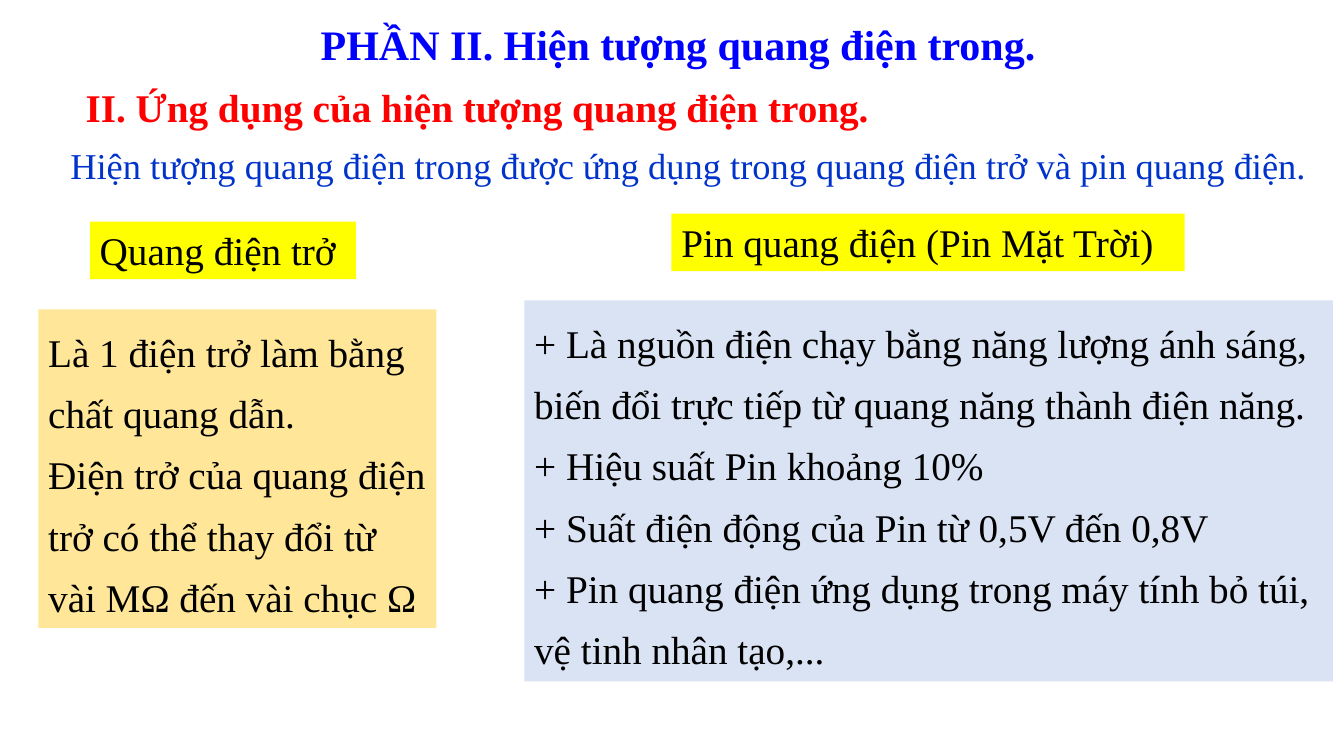
from pptx import Presentation
from pptx.dml.color import RGBColor
from pptx.enum.shapes import MSO_SHAPE as Preset
from pptx.enum.text import MSO_ANCHOR as Anchor, MSO_AUTO_SIZE as AutoSize, PP_ALIGN as Align
from pptx.util import Inches, Pt

WIDTH, HEIGHT = Inches(13.33), Inches(7.5)
FONT = "Times New Roman"
BLUE = RGBColor(0x00, 0x00, 0xFF)
RED = RGBColor(0xFF, 0x00, 0x00)
ROYAL = RGBColor(0x00, 0x33, 0xCC)
BLACK = RGBColor(0x00, 0x00, 0x00)
YELLOW = RGBColor(0xFF, 0xFF, 0x00)
SAND = RGBColor(0xFF, 0xE6, 0x99)
PALE_BLUE = RGBColor(0xDA, 0xE3, 0xF3)

RESISTOR_FACTS = [
    "Là 1 điện trở làm bằng chất quang dẫn.",
    "Điện trở của quang điện trở có thể thay đổi từ vài MΩ đến vài chục Ω",
]
CELL_FACTS = [
    "+ Là nguồn điện chạy bằng năng lượng ánh sáng, biến đổi trực tiếp từ quang năng thành điện năng.",
    "+ Hiệu suất Pin khoảng 10%",
    "+ Suất điện động của Pin từ 0,5V đến 0,8V",
    "+ Pin quang điện ứng dụng trong máy tính bỏ túi, vệ tinh nhân tạo,...",
]


def area(left, top, width, height):
    """Turn percentages of the slide's size into lengths."""
    return [int(share * side / 100)
            for share, side in zip((left, top, width, height), (WIDTH, HEIGHT) * 2)]


def write(frame, lines, size, color, bold=False, align=Align.LEFT, spacing=1.0):
    """Fill a text frame with one paragraph per line."""
    frame_format = {"word_wrap": True, "auto_size": AutoSize.SHAPE_TO_FIT_TEXT,
                    "vertical_anchor": Anchor.TOP}
    for name, value in frame_format.items():
        setattr(frame, name, value)
    for index, line in enumerate(lines):
        paragraph = frame.add_paragraph() if index else frame.paragraphs[0]
        paragraph.alignment = align
        paragraph.line_spacing = spacing
        run = paragraph.add_run()
        run.text = line
        run.font.color.rgb = color
        for name, value in {"name": FONT, "size": Pt(size), "bold": bold}.items():
            setattr(run.font, name, value)


def add_title(slide, text, box):
    """Place the title, set a little right of its box's centre."""
    title = slide.shapes.title
    for name, value in zip(("left", "top", "width", "height"), area(*box)):
        setattr(title, name, value)
    title.text_frame.margin_left = Inches(0.72)
    write(title.text_frame, [text], 30, BLUE, bold=True, align=Align.CENTER)


def add_line(slide, text, box, size, color, bold=False):
    """Add a plain line of text."""
    line = slide.shapes.add_textbox(*area(*box))
    write(line.text_frame, [text], size, color, bold)


def add_panel(slide, lines, box, fill, spacing=1.0):
    """Add a filled rectangle with black text."""
    panel = slide.shapes.add_shape(Preset.RECTANGLE, *area(*box))
    panel.shadow.inherit = False
    panel.fill.solid()
    panel.fill.fore_color.rgb = fill
    panel.line.fill.background()
    write(panel.text_frame, lines, 28, BLACK, spacing=spacing)


def main():
    """Build the slide and save it."""
    deck = Presentation()
    deck.slide_width, deck.slide_height = WIDTH, HEIGHT
    slide = deck.slides.add_slide(deck.slide_layouts[5])
    add_title(slide, "PHẦN II. Hiện tượng quang điện trong.", (10.65, 1.73, 75, 8.13))
    add_line(slide, "II. Ứng dụng của hiện tượng quang điện trong.",
             (5.63, 10.4, 73.67, 7.6), 28, RED, bold=True)
    add_line(slide, "Hiện tượng quang điện trong được ứng dụng trong quang điện trở và pin quang điện.",
             (4.5, 18.27, 94.07, 7.2), 26, ROYAL)
    add_panel(slide, ["Quang điện trở"], (6.68, 29.33, 19.8, 7.6), YELLOW)
    add_panel(slide, RESISTOR_FACTS, (2.85, 40.93, 29.63, 42.13), SAND, spacing=1.3)
    add_panel(slide, ["Pin quang điện (Pin Mặt Trời)"], (49.96, 28.27, 38.18, 7.6), YELLOW)
    add_panel(slide, CELL_FACTS, (39.01, 39.73, 60.17, 50.4), PALE_BLUE, spacing=1.3)
    deck.save("out.pptx")


if __name__ == "__main__":
    main()
